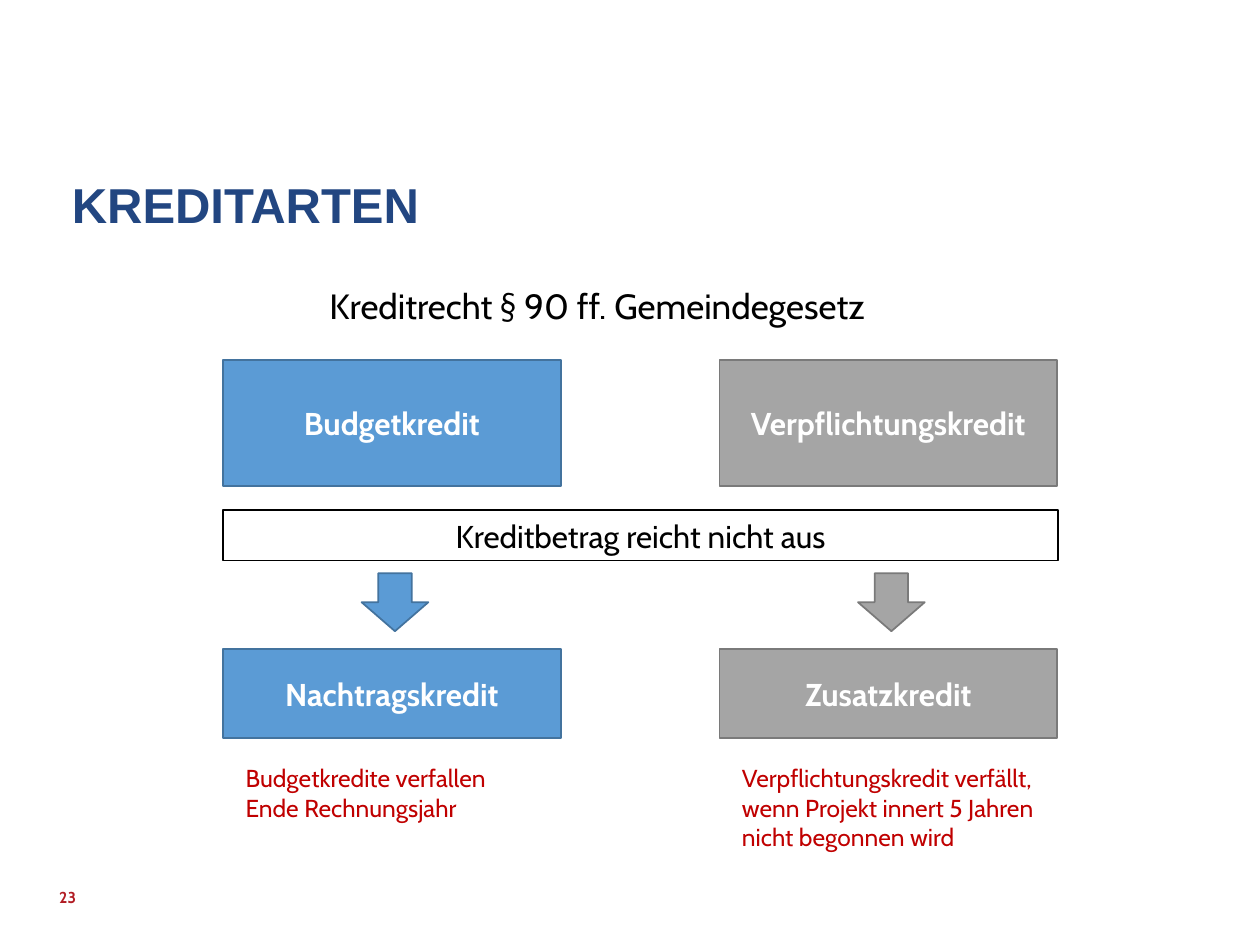
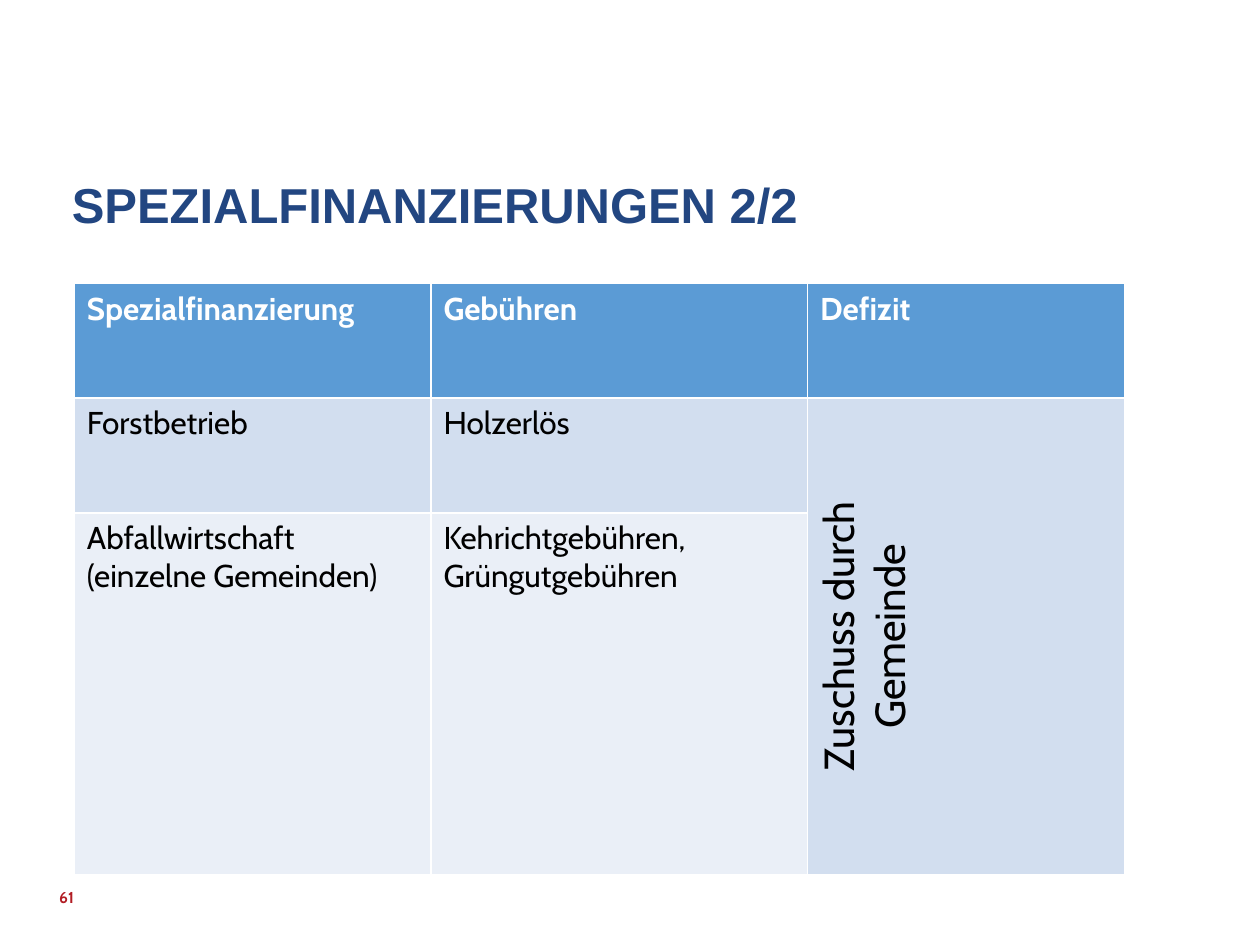
"""Build two slides on municipal credits and special financing."""
from pptx import Presentation, dml, util as u
from pptx.dml import color
from pptx.enum import shapes, text

BLUE, GREY, WHITE, BLACK = "5B9BD5", "A5A5A5", "FFFFFF", "000000"
NAVY, RED, CRIMSON = "224681", "C00000", "B21D24"
EDGES = {BLUE: "43739E", GREY: "7A7A7A", WHITE: BLACK}
BANDS = ("D2DEEF", "EAEFF7")
KIND = shapes.MSO_SHAPE
ALIGN = text.PP_ALIGN
TOP, MID = text.MSO_ANCHOR.TOP, text.MSO_ANCHOR.MIDDLE


def rgb(code):
    """Turn a hex string into a colour."""
    return color.RGBColor.from_string(code)


def place(item, *box):
    """Set left, top, width and height in inches."""
    item.left, item.top, item.width, item.height = map(u.Inches, box)


def write(frame, words, size=18, hue=BLACK, bold=False, font="Cabin",
          align=ALIGN.LEFT, anchor=TOP, space=None):
    """Fill a text frame with one formatted paragraph."""
    frame.word_wrap = True
    frame.vertical_anchor = anchor
    para = frame.paragraphs[0]
    para.alignment = align
    if space:
        para.line_spacing = space
    run = para.add_run()
    run.text = words
    run.font.name, run.font.size, run.font.bold = font, u.Pt(size), bold
    run.font.color.rgb = rgb(hue)
    return para


def label(slide, words, *box, **form):
    """Add a text box and return its paragraph."""
    area = slide.shapes.add_textbox(*map(u.Inches, box))
    return write(area.text_frame, words, **form)


def block(slide, kind, fill, *box, words="", **form):
    """Add a filled shape with an outline and optional text."""
    item = slide.shapes.add_shape(kind, *map(u.Inches, box))
    item.shadow.inherit = False
    item.fill.solid()
    item.fill.fore_color.rgb = rgb(fill)
    item.line.color.rgb = rgb(EDGES[fill])
    item.line.width = u.Pt(1)
    if words:
        write(item.text_frame, words, align=ALIGN.CENTER, anchor=MID, **form)


def start(deck, title, page):
    """Add a slide with its title and page number."""
    slide = deck.slides.add_slide(deck.slide_layouts[5])
    head = slide.shapes.title
    place(head, 0.47, 1.39, 7.64, 0.94)
    head.text_frame.auto_size = text.MSO_AUTO_SIZE.NONE
    write(head.text_frame, title, size=28, hue=NAVY, bold=True,
          font="Arial", space=0.9)
    foot = slide.shapes.add_textbox(0, 0, 0, 0)
    place(foot, 0.47, 6.92, 2.25, 0.4)
    frame = foot.text_frame
    frame.margin_left = frame.margin_right = 0
    frame.margin_top = frame.margin_bottom = 0
    write(frame, str(page), size=9, hue=CRIMSON, bold=True, anchor=MID)
    return slide


def credits(deck):
    """Show the two credit types and what follows each."""
    slide = start(deck, "KREDITARTEN", 23)
    law = label(slide, "Kreditrecht § 90 ff. Gemeindegesetz\t",
                1.14, 2.25, 7.64, 0.5, size=20, align=ALIGN.CENTER, space=0.9)
    props = law._p.get_or_add_pPr()
    props.set("marL", str(u.Inches(0.19)))
    props.set("indent", str(u.Inches(-0.19)))
    tracks = (
        (1.77, BLUE, "Budgetkredit", "Nachtragskredit", 2.52, 0.57,
         "Budgetkredite verfallen Ende Rechnungsjahr"),
        (5.71, GREY, "Verpflichtungskredit", "Zusatzkredit", 2.61, 0.81,
         "Verpflichtungskredit verfällt, wenn Projekt innert 5 Jahren "
         "nicht begonnen wird"),
    )
    for left, fill, first, extra, width, height, note in tracks:
        for words, top, tall in ((first, 2.86, 1), (extra, 5.15, 0.71)):
            block(slide, KIND.RECTANGLE, fill, left, top, 2.68, tall,
                  words=words, hue=WHITE, bold=True)
        block(slide, KIND.DOWN_ARROW, fill, left + 1.1, 4.55, 0.53, 0.46)
        label(slide, note, left + 0.08, 6.01, width, height, size=14, hue=RED)
    block(slide, KIND.RECTANGLE, WHITE, 1.77, 4.05, 6.63, 0.4,
          words="Kreditbetrag reicht nicht aus")


def funds(deck):
    """Show the table of special financing."""
    slide = start(deck, "SPEZIALFINANZIERUNGEN 2/2", 61)
    rows = (
        ("Spezialfinanzierung", "Gebühren", "Defizit"),
        ("Forstbetrieb", "Holzerlös", "Zuschuss durch Gemeinde"),
        ("Abfallwirtschaft (einzelne Gemeinden)",
         "Kehrichtgebühren, Grüngutgebühren", ""),
    )
    box = map(u.Inches, (0.59, 2.25, 8.35, 2.74))
    table = slide.shapes.add_table(3, 3, *box).table
    for col, width in zip(table.columns, (2.83, 2.99, 2.52)):
        col.width = u.Inches(width)
    grant = table.cell(1, 2)
    grant.merge(table.cell(2, 2))
    grant._tc.get_or_add_tcPr().set("vert", "vert270")
    for i, (row, fill) in enumerate(zip(rows, (BLUE, *BANDS))):
        table.rows[i].height = u.Inches(0.91)
        for j, words in enumerate(row):
            cell = table.cell(i, j)
            cell.fill.solid()
            cell.fill.fore_color.rgb = rgb(fill)
            if not words:
                continue
            form = {"hue": WHITE, "bold": True} if i == 0 else {}
            if (i, j) == (1, 2):
                form = {"size": 24, "align": ALIGN.CENTER}
                cell.vertical_anchor = MID
            fill_cell(cell, words, **form)


def fill_cell(cell, words, **form):
    """Write into a table cell, keeping its own anchor."""
    anchor = cell.vertical_anchor
    write(cell.text_frame, words, **form)
    cell.vertical_anchor = anchor


def main():
    """Build and save the deck."""
    deck = Presentation()
    deck.slide_width, deck.slide_height = u.Inches(10), u.Inches(7.5)
    credits(deck)
    funds(deck)
    deck.save("out.pptx")


if __name__ == "__main__":
    main()
